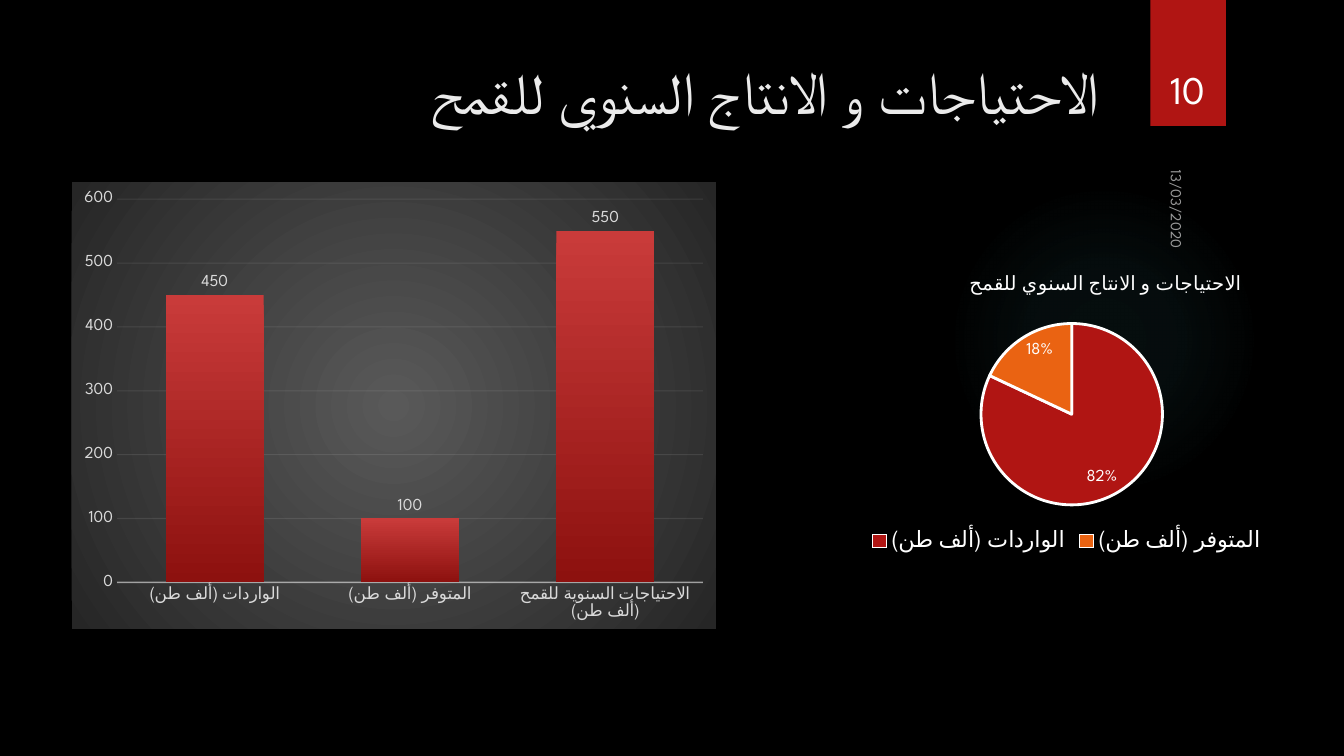
from lxml.etree import SubElement
from pptx import Presentation
from pptx.chart.data import CategoryChartData
from pptx.dml.color import RGBColor
from pptx.enum.chart import XL_CHART_TYPE, XL_LABEL_POSITION, XL_LEGEND_POSITION, XL_TICK_MARK
from pptx.enum.shapes import MSO_SHAPE
from pptx.enum.text import MSO_ANCHOR, PP_ALIGN
from pptx.oxml import parse_xml
from pptx.oxml.ns import nsdecls, qn
from pptx.util import Pt

PX = 9144
FONT = "League Spartan"
BLACK = RGBColor(0x00, 0x00, 0x00)
WHITE = RGBColor(0xFF, 0xFF, 0xFF)
TITLE_GREY = RGBColor(0xEB, 0xEB, 0xEB)
AXIS_TEXT = RGBColor(0xD9, 0xD9, 0xD9)
AXIS_LINE = RGBColor(0xF2, 0xF2, 0xF2)
PANEL_CENTRE = RGBColor(0x59, 0x59, 0x59)
PANEL_EDGE = RGBColor(0x26, 0x26, 0x26)
GLOW = RGBColor(0x50, 0xB9, 0xC1)
RED = RGBColor(0xB0, 0x15, 0x13)
ORANGE = RGBColor(0xEA, 0x63, 0x12)
BAR_TOP = RGBColor(0xC9, 0x3B, 0x3A)
BAR_BOTTOM = RGBColor(0x8D, 0x11, 0x0F)

HEADING = "الاحتياجات و الانتاج السنوي للقمح"
IMPORTS = "الواردات (ألف طن)"
AVAILABLE = "المتوفر (ألف طن)"
NEEDS = "الاحتياجات السنوية للقمح (ألف طن)"


def scaled(bounds):
    return [value * PX for value in bounds]


def style_font(font, size, color):
    font.name = FONT
    font.size = Pt(size)
    font.color.rgb = color


def set_alpha(element, path, percent):
    for color in element.xpath(path + "//a:srgbClr"):
        SubElement(color, qn("a:alpha")).set("val", str(percent * 1000))


def radial_gradient(stops):
    stop_xml = "".join(
        f'<a:gs pos="{position * 1000}"><a:srgbClr val="{color}">'
        f'<a:alpha val="{alpha * 1000}"/></a:srgbClr></a:gs>'
        for position, color, alpha in stops
    )
    return parse_xml(
        f'<a:gradFill {nsdecls("a")} rotWithShape="1"><a:gsLst>{stop_xml}</a:gsLst>'
        '<a:path path="circle"><a:fillToRect l="50000" t="50000" r="50000" b="50000"/>'
        "</a:path></a:gradFill>"
    )


def set_layout(parent, index, **fractions):
    for layout in parent.findall(qn("c:layout")):
        parent.remove(layout)
    target = '<c:layoutTarget val="inner"/>' if "w" in fractions else ""
    modes = "".join(f'<c:{key}Mode val="edge"/>' for key in "xy")
    values = "".join(f'<c:{key} val="{value}"/>' for key, value in fractions.items())
    parent.insert(index, parse_xml(
        f'<c:layout {nsdecls("c")}><c:manualLayout>{target}{modes}{values}'
        "</c:manualLayout></c:layout>"
    ))


def add_plain_shape(page, kind, bounds, color):
    shape = page.shapes.add_shape(kind, *scaled(bounds))
    shape.shadow.inherit = False
    shape.fill.solid()
    shape.fill.fore_color.rgb = color
    shape.line.fill.background()
    return shape


def add_glow(page, bounds):
    glow = add_plain_shape(page, MSO_SHAPE.OVAL, bounds, GLOW)
    solid = glow.element.xpath("./p:spPr/a:solidFill")[0]
    gradient = radial_gradient([(0, GLOW, 7), (36, GLOW, 6), (69, GLOW, 0)])
    solid.getparent().replace(solid, gradient)


def add_text(page, bounds, text, size, color, align=PP_ALIGN.LEFT, anchor=MSO_ANCHOR.TOP):
    box = page.shapes.add_textbox(*scaled(bounds))
    frame = box.text_frame
    frame.word_wrap = True
    frame.vertical_anchor = anchor
    frame.text = text
    para = frame.paragraphs[0]
    para.alignment = align
    style_font(para.runs[0].font, size, color)
    return box


def add_chart(page, kind, bounds, categories, values, number_format):
    data = CategoryChartData(number_format=number_format)
    data.categories = categories
    data.add_series("Series 1", values)
    chart = page.shapes.add_chart(kind, *scaled(bounds), data).chart
    style_font(chart.font, 10, WHITE)
    chart.has_title = False
    chart.has_legend = False
    return chart


def add_labels(plot, color, position, number_format):
    plot.has_data_labels = True
    labels = plot.data_labels
    labels.show_value = True
    labels.number_format = number_format
    labels.number_format_is_linked = False
    labels.position = position
    style_font(labels.font, 12, color)


def style_axis(axis):
    axis.major_tick_mark = XL_TICK_MARK.NONE
    axis.minor_tick_mark = XL_TICK_MARK.NONE
    style_font(axis.tick_labels.font, 12, AXIS_TEXT)


def style_line(line, width):
    line.width = Pt(width)
    line.color.rgb = AXIS_LINE


def add_column_chart(page, bounds):
    chart = add_chart(page, XL_CHART_TYPE.COLUMN_CLUSTERED, bounds,
                      [IMPORTS, AVAILABLE, NEEDS], [450, 100, 550], "General")
    panel = parse_xml(f'<c:spPr {nsdecls("c", "a")}><a:ln><a:noFill/></a:ln></c:spPr>')
    panel.insert(0, radial_gradient([(0, PANEL_CENTRE, 100), (100, PANEL_EDGE, 100)]))
    chart.element.find(qn("c:chart")).addnext(panel)

    plot = chart.plots[0]
    plot.vary_by_categories = False
    plot.gap_width = 100
    plot.overlap = -24
    add_labels(plot, AXIS_TEXT, XL_LABEL_POSITION.OUTSIDE_END, "General")
    fill = plot.series[0].format.fill
    fill.gradient()
    fill.gradient_angle = 270
    for stop, color in zip(fill.gradient_stops, [BAR_TOP, BAR_BOTTOM]):
        stop.color.rgb = color

    category_axis, value_axis = chart.category_axis, chart.value_axis
    for axis in (category_axis, value_axis):
        style_axis(axis)
    style_line(category_axis.format.line, 1)
    value_axis.format.line.fill.background()
    value_axis.minimum_scale = 0
    value_axis.maximum_scale = 600
    value_axis.major_unit = 100
    style_line(value_axis.major_gridlines.format.line, 0.75)
    set_alpha(chart.element, ".//c:catAx/c:spPr", 54)
    set_alpha(chart.element, ".//c:valAx/c:majorGridlines", 10)


def add_pie_chart(page, bounds):
    chart = add_chart(page, XL_CHART_TYPE.PIE, bounds,
                      [IMPORTS, AVAILABLE], [0.82, 0.18], "0%")
    chart.has_title = True
    frame = chart.chart_title.text_frame
    frame.text = HEADING
    title_font = frame.paragraphs[0].runs[0].font
    style_font(title_font, 14, WHITE)
    title_font.bold = False
    chart.has_legend = True
    chart.legend.position = XL_LEGEND_POSITION.BOTTOM
    chart.legend.include_in_layout = False
    style_font(chart.legend.font, 16, WHITE)

    plot = chart.plots[0]
    plot.vary_by_categories = True
    add_labels(plot, WHITE, XL_LABEL_POSITION.INSIDE_END, "0%")
    for index, color in enumerate([RED, ORANGE]):
        style = plot.series[0].points[index].format
        style.fill.solid()
        style.fill.fore_color.rgb = color
        style.line.width = Pt(2)
        style.line.color.rgb = WHITE
    set_layout(chart.element.xpath("./c:chart/c:title")[0], 1, x=0.3, y=0.05)
    set_layout(chart.element.xpath("./c:chart/c:plotArea")[0], 0, x=0.33, y=0.23, w=0.36, h=0.6)


def main():
    deck = Presentation()
    deck.slide_width, deck.slide_height = scaled((1333, 750))
    page = deck.slides.add_slide(deck.slide_layouts[6])
    page.background.fill.solid()
    page.background.fill.fore_color.rgb = BLACK

    add_glow(page, (941, 183, 308, 308))
    add_plain_shape(page, MSO_SHAPE.RECTANGLE, (1141, 0, 75, 125), RED)
    title = add_text(page, (71, 50, 1029, 153), HEADING, 42, TITLE_GREY, PP_ALIGN.RIGHT)
    title.element.xpath(".//a:pPr")[0].set("rtl", "1")
    date = add_text(page, (1111, 196, 108, 33), "13/03/2020", 11, WHITE)
    date.rotation = 90
    set_alpha(date.element, ".//a:rPr", 60)
    add_text(page, (1132, 32, 92, 84), "10", 28, WHITE, PP_ALIGN.CENTER, MSO_ANCHOR.BOTTOM)
    add_column_chart(page, (71, 181, 639, 443))
    add_pie_chart(page, (808, 252, 500, 300))
    deck.save("out.pptx")


if __name__ == "__main__":
    main()
